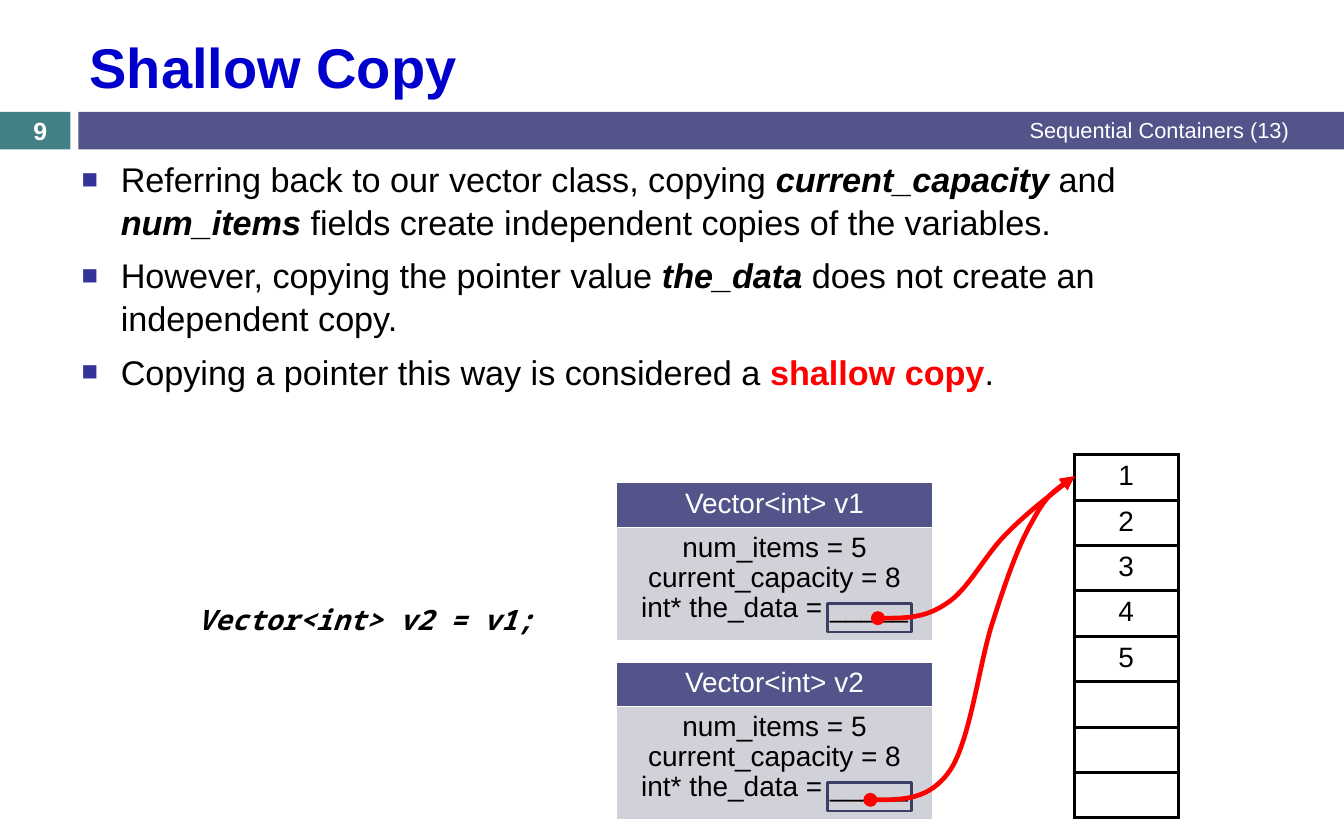
from dataclasses import dataclass
from lxml.etree import SubElement
from pptx import Presentation
from pptx.dml.color import RGBColor
from pptx.enum.shapes import MSO_SHAPE
from pptx.enum.text import MSO_ANCHOR, PP_ALIGN
from pptx.oxml import parse_xml
from pptx.oxml.ns import nsdecls, qn
from pptx.util import Cm, Pt


@dataclass(frozen=True)
class Theme:
    font: str = "Arial"
    mono: str = "Noto Sans Mono"
    title: str = "0000CC"
    teal: str = "438086"
    band: str = "53548A"
    pale: str = "D1D1DA"
    edge: str = "3D3E66"
    bullet: str = "333399"
    red: str = "FF0000"
    black: str = "000000"
    white: str = "FFFFFF"
    head_size: int = 36
    body_size: int = 22
    cell_size: int = 18
    page_size: int = 16
    note_size: int = 14


THEME = Theme()

# Each run is (text, style); styles are "", "term" or "alert".
POINTS = [
    [("Referring back to our vector class, copying ", ""), ("current_capacity", "term"),
     (" and ", ""), ("num_items", "term"),
     (" fields create independent copies of the variables.", "")],
    [("However, copying the pointer value ", ""), ("the_data", "term"),
     (" does not create an independent copy.", "")],
    [("Copying a pointer this way is considered a ", ""), ("shallow copy", "alert"), (".", "")],
]
FIELDS = ["num_items = 5", "current_capacity = 8", "int* the_data = _____"]
VECTORS = {"v1": 10.95, "v2": 15.01}
ARRAY = ["1", "2", "3", "4", "5", "", "", ""]
# A start point, then three points for each Bézier segment.
CURVES = [
    [(19.74, 18.14), (20.4, 18.14), (21.08, 18.14), (21.54, 17.48),
     (22, 16.81), (22.2, 15.09), (22.5, 14.15), (22.81, 13.18), (23.09, 12.37),
     (23.42, 11.81), (23.72, 11.25), (24.05, 11.02), (24.38, 10.8)],
    [(19.91, 14.02), (20.45, 14.02), (20.98, 14.02), (21.46, 13.69),
     (21.95, 13.39), (22.33, 12.6), (22.81, 12.12), (23.29, 11.63),
     (23.83, 11.23), (24.36, 10.8)],
]


def color(code):
    return RGBColor.from_string(code)


def style(para, size, code, font=THEME.font, bold=False, italic=False, align=None):
    para.font.size = Pt(size)
    para.font.name = font
    para.font.bold = bold
    para.font.italic = italic
    para.font.color.rgb = color(code)
    para.alignment = align


def add_bar(slide, box, fill=None, line=None):
    bar = slide.shapes.add_shape(MSO_SHAPE.RECTANGLE, *map(Cm, box))
    bar.shadow.inherit = False
    if fill:
        bar.fill.solid()
        bar.fill.fore_color.rgb = color(fill)
    else:
        bar.fill.background()
    if line:
        bar.line.color.rgb = color(line)
        bar.line.width = Pt(1.5)
    else:
        bar.line.fill.background()


def add_text(slide, box, text, size, code, anchor=MSO_ANCHOR.MIDDLE, **look):
    frame = slide.shapes.add_textbox(*map(Cm, box)).text_frame
    frame.word_wrap = True
    frame.vertical_anchor = anchor
    frame.text = text
    style(frame.paragraphs[0], size, code, **look)


def add_title(slide, text):
    title = slide.shapes.title
    title.left, title.top, title.width, title.height = map(Cm, (1.78, 0.48, 27.71, 2.03))
    title.text_frame.text = text
    title.text_frame.vertical_anchor = MSO_ANCHOR.MIDDLE
    style(title.text_frame.paragraphs[0], THEME.head_size, THEME.title,
          bold=True, align=PP_ALIGN.LEFT)


def set_bullet(para):
    props = para._p.get_or_add_pPr()
    props.set("marL", str(Cm(0.89)))
    props.set("indent", str(Cm(-0.89)))
    tint = SubElement(props, qn("a:buClr"))
    SubElement(tint, qn("a:srgbClr"), val=THEME.bullet)
    SubElement(props, qn("a:buSzPct"), val="80000")
    SubElement(props, qn("a:buFont"), typeface=THEME.font)
    SubElement(props, qn("a:buChar"), char="■")


def add_points(slide, box, points):
    frame = slide.shapes.add_textbox(*map(Cm, box)).text_frame
    frame.word_wrap = True
    for index, runs in enumerate(points):
        para = frame.add_paragraph() if index else frame.paragraphs[0]
        para.space_before = Pt(7)
        para.line_spacing = 1.04
        set_bullet(para)
        style(para, THEME.body_size, THEME.black)
        for text, kind in runs:
            run = para.add_run()
            run.text = text
            if kind:
                run.font.bold = True
            if kind == "term":
                run.font.italic = True
            if kind == "alert":
                run.font.color.rgb = color(THEME.red)


def set_edges(cell, code, width):
    props = cell._tc.get_or_add_tcPr()
    for index, side in enumerate(("lnL", "lnR", "lnT", "lnB")):
        props.insert(index, parse_xml(
            f'<a:{side} {nsdecls("a")} w="{Pt(width)}"><a:solidFill>'
            f'<a:srgbClr val="{code}"/></a:solidFill></a:{side}>'))


def add_grid(slide, left, top, width, rows, edge, weight):
    """Add a one-column table; each row is (height, text, fill, text colour)."""
    total = sum(row[0] for row in rows)
    table = slide.shapes.add_table(
        len(rows), 1, *map(Cm, (left, top, width, total))).table
    table.first_row = table.horz_banding = False
    for index, (height, text, fill, ink) in enumerate(rows):
        table.rows[index].height = Cm(height)
        cell = table.cell(index, 0)
        cell.text = text
        if fill:
            cell.fill.solid()
            cell.fill.fore_color.rgb = color(fill)
        else:
            cell.fill.background()
        set_edges(cell, edge, weight)
        paras = cell.text_frame.paragraphs
        for para in paras:
            style(para, THEME.cell_size, ink, align=PP_ALIGN.CENTER)
            if len(paras) > 1:
                para.line_spacing = 0.96


def add_vector(slide, name, top):
    rows = [(0.99, f"Vector<int> {name}", THEME.band, THEME.white),
            (2.57, "\n".join(FIELDS), THEME.pale, THEME.black)]
    add_grid(slide, 13.97, top, 7.19, rows, THEME.white, 1)
    add_bar(slide, (18.77, top + 2.74, 1.9, 0.64), line=THEME.edge)


def add_curve(slide, points):
    """Draw a Bézier arrow by grouping the outline's points in threes."""
    start, *rest = [(Cm(x), Cm(y)) for x, y in points]
    pen = slide.shapes.build_freeform(*start)
    pen.add_line_segments(rest, close=False)
    curve = pen.convert_to_shape()
    curve.shadow.inherit = False
    curve.fill.background()
    curve.line.color.rgb = color(THEME.red)
    curve.line.width = Pt(3)
    track = curve._element.find(".//" + qn("a:path"))
    track.set("fill", "none")
    steps = track.findall(qn("a:lnTo"))
    for index, step in enumerate(steps):
        if index % 3 == 0:
            bend = SubElement(track, qn("a:cubicBezTo"))
        bend.append(step[0])
        track.remove(step)
    line = curve.line._get_or_add_ln()
    SubElement(line, qn("a:headEnd"), type="oval")
    SubElement(line, qn("a:tailEnd"), type="triangle")


def main():
    deck = Presentation()
    deck.slide_width, deck.slide_height = Cm(30.48), Cm(19.05)
    slide = deck.slides.add_slide(deck.slide_layouts[5])
    add_bar(slide, (0, 2.54, 1.6, 0.85), THEME.teal)
    add_bar(slide, (1.78, 2.54, 28.7, 0.85), THEME.band)
    add_title(slide, "Shallow Copy")
    add_points(slide, (1.6, 3.43, 27.91, 14.88), POINTS)
    add_text(slide, (11.43, 2.51, 18.06, 0.89), "Sequential Containers (13)",
             THEME.note_size, THEME.white, align=PP_ALIGN.RIGHT)
    add_text(slide, (0, 2.57, 1.83, 0.76), "9", THEME.page_size, THEME.white,
             bold=True, align=PP_ALIGN.CENTER)
    add_text(slide, (4.24, 13.54, 8.69, 1.02), "Vector<int> v2 = v1;", THEME.cell_size,
             THEME.black, MSO_ANCHOR.TOP, font=THEME.mono, bold=True, italic=True)
    for name, top in VECTORS.items():
        add_vector(slide, name, top)
    add_grid(slide, 24.36, 10.31, 2.36,
             [(1.03, text, None, THEME.black) for text in ARRAY], THEME.black, 2.25)
    for points in CURVES:
        add_curve(slide, points)
    deck.save("out.pptx")


if __name__ == "__main__":
    main()
